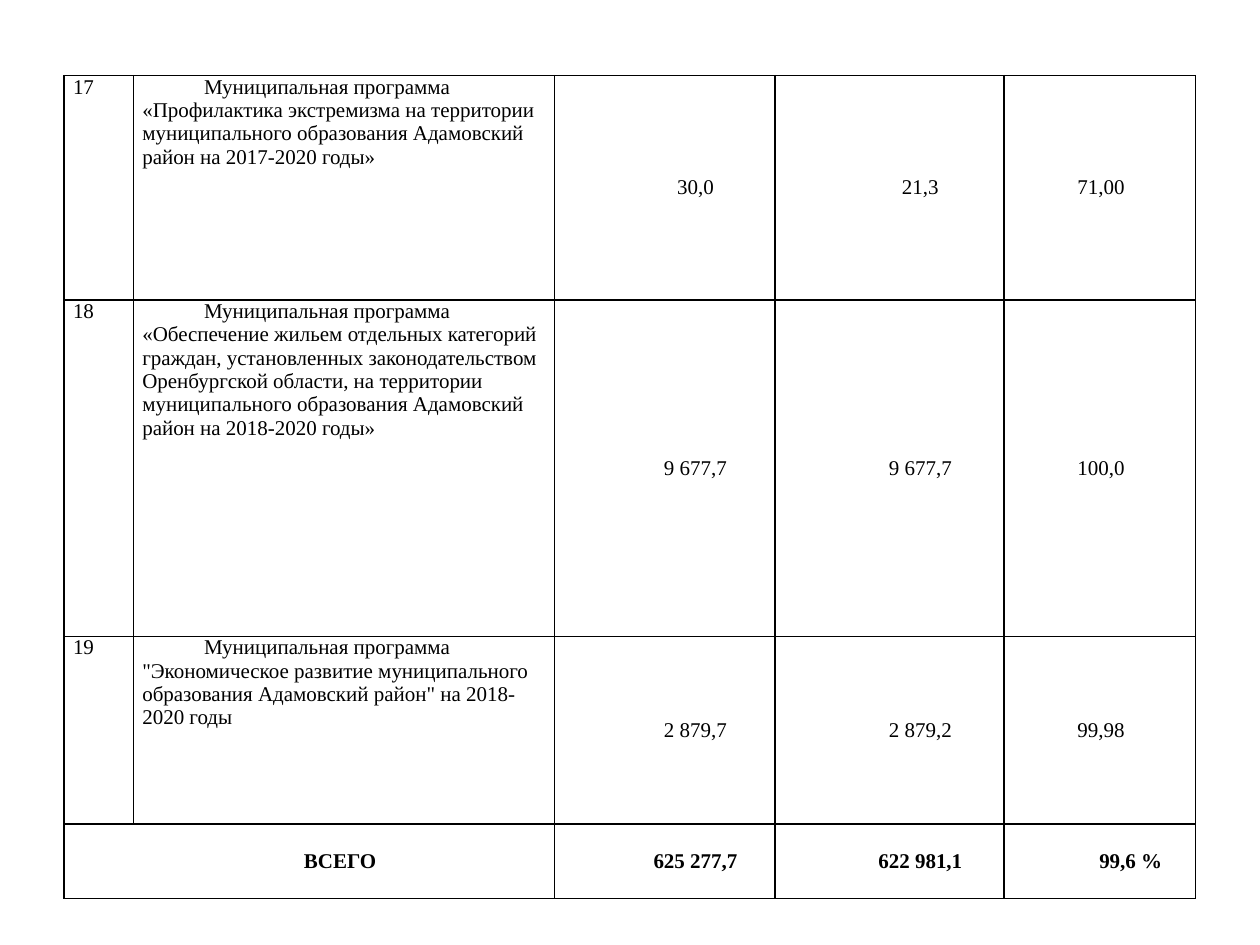
from dataclasses import dataclass

from lxml.etree import SubElement
from pptx import Presentation
from pptx.dml.color import RGBColor
from pptx.enum.text import MSO_ANCHOR, PP_ALIGN
from pptx.oxml.ns import qn
from pptx.util import Inches, Pt

COLORS = {"text": "000000", "border": "000000"}
COL_WIDTHS = [0.55, 3.34, 1.75, 1.82, 1.52]
ROW_HEIGHTS = [1.78, 2.67, 1.49, 0.59]
CELL_FORMAT = {
    "margin_left": Inches(0.07),
    "margin_right": Inches(0.07),
    "margin_top": 0,
    "margin_bottom": 0,
}
FONT_FORMAT = {"name": "Times New Roman", "size": Pt(12)}
INDENT = 0.49


@dataclass
class CellStyle:
    indent: float = INDENT
    centered: bool = True
    bold: bool = False


@dataclass
class Program:
    number: str
    title: str
    plan: str
    actual: str
    percent: str


PROGRAM_STYLES = [
    CellStyle(indent=0, centered=False),
    CellStyle(centered=False),
    CellStyle(),
    CellStyle(),
    CellStyle(indent=0.02),
]
TOTAL_STYLE = CellStyle(bold=True)

PROGRAMS = [
    Program(
        "17",
        "Муниципальная программа «Профилактика экстремизма на территории "
        "муниципального образования Адамовский район на 2017-2020 годы»",
        "30,0", "21,3", "71,00",
    ),
    Program(
        "18",
        "Муниципальная программа «Обеспечение жильем отдельных категорий "
        "граждан, установленных законодательством Оренбургской области, "
        "на территории муниципального образования Адамовский район "
        "на 2018-2020 годы»",
        "9 677,7", "9 677,7", "100,0",
    ),
    Program(
        "19",
        'Муниципальная программа "Экономическое развитие муниципального '
        'образования Адамовский район" на 2018-2020 годы',
        "2 879,7", "2 879,2", "99,98",
    ),
]
TOTALS = {0: "ВСЕГО", 2: "625 277,7", 3: "622 981,1", 4: "99,6 %"}


def set_format(obj, values: dict) -> None:
    for name, value in values.items():
        setattr(obj, name, value)


def draw_borders(cell) -> None:
    tcPr = cell._tc.get_or_add_tcPr()
    for position, side in enumerate(("lnL", "lnR", "lnT", "lnB")):
        ln = tcPr.makeelement(qn(f"a:{side}"), {"w": str(Pt(1))})
        tcPr.insert(position, ln)
        fill = SubElement(ln, qn("a:solidFill"))
        SubElement(fill, qn("a:srgbClr"), val=COLORS["border"])


def write_cell(cell, text: str, style: CellStyle) -> None:
    set_format(cell, CELL_FORMAT)
    cell.vertical_anchor = MSO_ANCHOR.MIDDLE if style.centered else MSO_ANCHOR.TOP
    p = cell.text_frame.paragraphs[0]
    p.alignment = PP_ALIGN.CENTER if style.centered else PP_ALIGN.LEFT
    p._p.get_or_add_pPr().set("indent", str(Inches(style.indent)))
    r = p.add_run()
    r.text = text
    set_format(r.font, {**FONT_FORMAT, "bold": style.bold})
    r.font.color.rgb = RGBColor.from_string(COLORS["text"])


def add_budget_table(s) -> None:
    table = s.shapes.add_table(
        len(ROW_HEIGHTS), len(COL_WIDTHS), Inches(0.51), Inches(0.6),
        Inches(sum(COL_WIDTHS)), Inches(sum(ROW_HEIGHTS)),
    ).table
    set_format(table, {"first_row": False, "horz_banding": False})
    for column, width in zip(table.columns, COL_WIDTHS):
        column.width = Inches(width)
    for row, height in zip(table.rows, ROW_HEIGHTS):
        row.height = Inches(height)
    for cell in table.iter_cells():
        cell.fill.background()
        draw_borders(cell)

    for i, program in enumerate(PROGRAMS):
        values = [program.number, program.title, program.plan,
                  program.actual, program.percent]
        for j, (text, style) in enumerate(zip(values, PROGRAM_STYLES)):
            write_cell(table.cell(i, j), text, style)

    total_row = len(PROGRAMS)
    table.cell(total_row, 0).merge(table.cell(total_row, 1))
    for j, text in TOTALS.items():
        write_cell(table.cell(total_row, j), text, TOTAL_STYLE)


def main() -> None:
    prs = Presentation()
    set_format(prs, {"slide_width": Inches(10), "slide_height": Inches(7.5)})
    s = prs.slides.add_slide(prs.slide_layouts[6])
    add_budget_table(s)
    prs.save("out.pptx")


if __name__ == "__main__":
    main()
